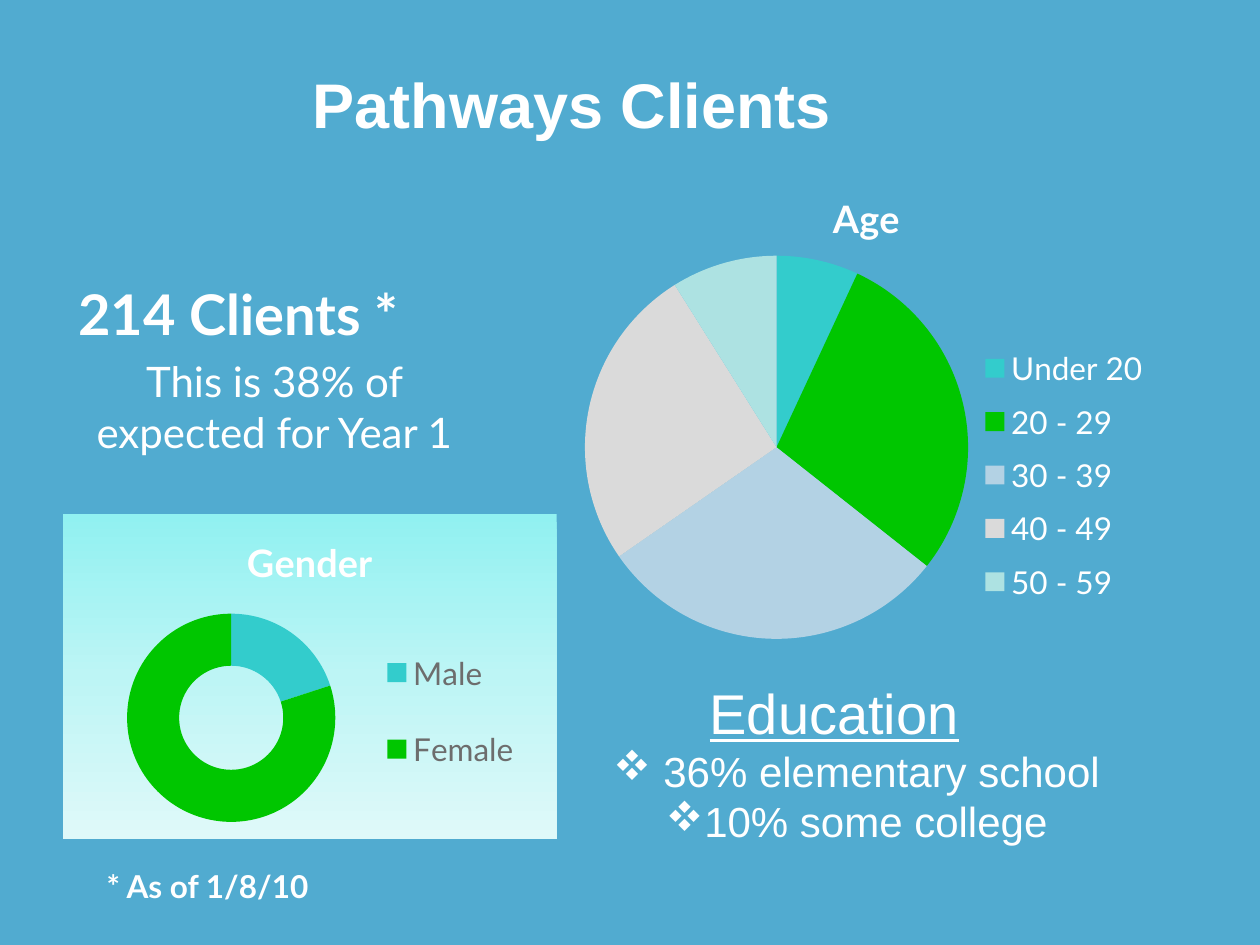
from lxml import etree
from pptx import Presentation
from pptx import util as u
from pptx.chart.data import CategoryChartData
from pptx.dml.color import RGBColor
from pptx.enum import chart as chart_types
from pptx.enum import text
from pptx.oxml import parse_xml
from pptx.oxml.ns import nsdecls, qn

WHITE = "FFFFFF"
SLICE_COLORS = ["33CCCC", "00C600", "B3D2E4", "DADADA", "ADE2E2"]


def color(value):
    return RGBColor.from_string(value)


def place(shape, box):
    shape.left, shape.top, shape.width, shape.height = map(u.Cm, box)


def style_font(font, size, name="Lato", bold=False, fill=WHITE):
    font.size = u.Pt(size)
    font.name = name
    font.bold = bold
    font.color.rgb = color(fill)


def add_run(paragraph, words, size, **style):
    run = paragraph.add_run()
    run.text = words
    style_font(run.font, size, **style)
    return run


def add_text_frame(slide, box, inset=0.25):
    shape = slide.shapes.add_textbox(*map(u.Cm, box))
    frame = shape.text_frame
    frame.word_wrap = True
    frame.margin_left = frame.margin_right = u.Cm(inset)
    return frame


def add_title(slide, box):
    title = slide.shapes.title
    place(title, box)
    frame = title.text_frame
    frame.vertical_anchor = text.MSO_ANCHOR.BOTTOM
    paragraph = frame.paragraphs[0]
    paragraph.alignment = text.PP_ALIGN.CENTER
    add_run(paragraph, "Pathways Clients", 36, name="Arial", bold=True)


def add_client_count(slide, box):
    frame = add_text_frame(slide, box, inset=0.5)
    add_run(frame.paragraphs[0], "214 Clients *", 32, bold=True)
    share = frame.add_paragraph()
    share.alignment = text.PP_ALIGN.CENTER
    share.space_before = u.Pt(5)
    add_run(share, "This is 38% of expected for Year 1", 24)


def add_footnote(slide, box):
    frame = add_text_frame(slide, box)
    add_run(frame.paragraphs[0], "* As of 1/8/10", 18, bold=True)


def add_diamond_bullet(paragraph, indent):
    properties = paragraph._p.get_or_add_pPr()
    properties.set("marL", str(u.Cm(indent)))
    properties.set("indent", "0")
    etree.SubElement(properties, qn("a:buFont")).set("typeface", "Wingdings")
    etree.SubElement(properties, qn("a:buChar")).set("char", "v")


def add_education(slide, box):
    frame = add_text_frame(slide, box)
    heading = frame.paragraphs[0]
    heading.alignment = text.PP_ALIGN.CENTER
    add_run(heading, "Education", 32, name="Arial").font.underline = True
    for words in (" 36% elementary school", "10% some college"):
        paragraph = frame.add_paragraph()
        paragraph.alignment = text.PP_ALIGN.CENTER
        add_diamond_bullet(paragraph, 0.9)
        add_run(paragraph, words, 24, name="Arial")


def add_chart(slide, box, kind, title, series_name, values, legend_color=WHITE):
    data = CategoryChartData()
    data.categories = list(values)
    data.add_series(series_name, values.values())
    chart = slide.shapes.add_chart(kind, *map(u.Cm, box), data).chart
    style_font(chart.font, 18)

    chart.has_title = True
    paragraph = chart.chart_title.text_frame.paragraphs[0]
    add_run(paragraph, title, 21.6, bold=True)
    chart.chart_title.include_in_layout = False

    chart.has_legend = True
    chart.legend.position = chart_types.XL_LEGEND_POSITION.RIGHT
    chart.legend.include_in_layout = False
    style_font(chart.legend.font, 18, fill=legend_color)

    plot = chart.plots[0]
    plot.vary_by_categories = True
    plot.has_data_labels = False
    for index in range(len(values)):
        fill = plot.series[0].points[index].format.fill
        fill.solid()
        fill.fore_color.rgb = color(SLICE_COLORS[index])
    return chart


def make_layout(x, y, width, height, target=None):
    parts = {"layoutTarget": target} if target else {}
    parts |= {"xMode": "edge", "yMode": "edge", "x": x, "y": y, "w": width, "h": height}
    children = "".join(f'<c:{tag} val="{value}"/>' for tag, value in parts.items())
    return parse_xml(
        f'<c:layout {nsdecls("c")}><c:manualLayout>{children}</c:manualLayout></c:layout>')


def remove_layout(element):
    for old in element.findall(qn("c:layout")):
        element.remove(old)


def set_plot_layout(chart, *box):
    area = chart._chartSpace.chart.plotArea
    remove_layout(area)
    area.insert(0, make_layout(*box, target="inner"))


def set_legend_layout(chart, *box):
    legend = chart._chartSpace.chart.find(qn("c:legend"))
    remove_layout(legend)
    legend.find(qn("c:legendPos")).addnext(make_layout(*box))


def set_gradient(chart, colors):
    step = 100000 // (len(colors) - 1)
    stops = "".join(f'<a:gs pos="{index * step}"><a:srgbClr val="{value}"/></a:gs>'
                    for index, value in enumerate(colors))
    chart._chartSpace.chart.addnext(parse_xml(
        f'<c:spPr {nsdecls("c", "a")}><a:gradFill><a:gsLst>{stops}</a:gsLst>'
        '<a:lin ang="5400000" scaled="0"/></a:gradFill><a:ln><a:noFill/></a:ln></c:spPr>'))


def add_age_chart(slide, box):
    ages = {"Under 20": 7, "20 - 29": 29, "30 - 39": 30, "40 - 49": 26, "50 - 59": 9}
    chart = add_chart(slide, box, chart_types.XL_CHART_TYPE.PIE, "Age", "Series 1", ages)
    set_plot_layout(chart, 0.03, 0.15, 0.64, 0.81)
    set_legend_layout(chart, 0.68, 0.33, 0.3, 0.56)


def add_gender_chart(slide, box):
    chart = add_chart(slide, box, chart_types.XL_CHART_TYPE.DOUGHNUT, "Gender", "Gender",
                      {"Male": 20, "Female": 80}, legend_color="6D6D6D")
    set_legend_layout(chart, 0.63, 0.31, 0.31, 0.59)
    set_gradient(chart, ["91F1F1", "BDF5F5", "DFF9F9"])


def main():
    presentation = Presentation()
    presentation.slide_width, presentation.slide_height = u.Cm(25.4), u.Cm(19.05)
    slide = presentation.slides.add_slide(presentation.slide_layouts[5])
    slide.background.fill.solid()
    slide.background.fill.fore_color.rgb = color("51ABD0")

    add_title(slide, (1.47, 0.43, 20.12, 2.54))
    add_client_count(slide, (1.08, 5.52, 8.9, 5.08))
    add_footnote(slide, (1.9, 17.35, 5.3, 1.27))
    add_age_chart(slide, (11.43, 3.38, 12.07, 10.16))
    add_education(slide, (10.22, 13.55, 13.2, 4.7))
    add_gender_chart(slide, (1.27, 10.37, 9.95, 6.55))

    presentation.save("out.pptx")


if __name__ == "__main__":
    main()
